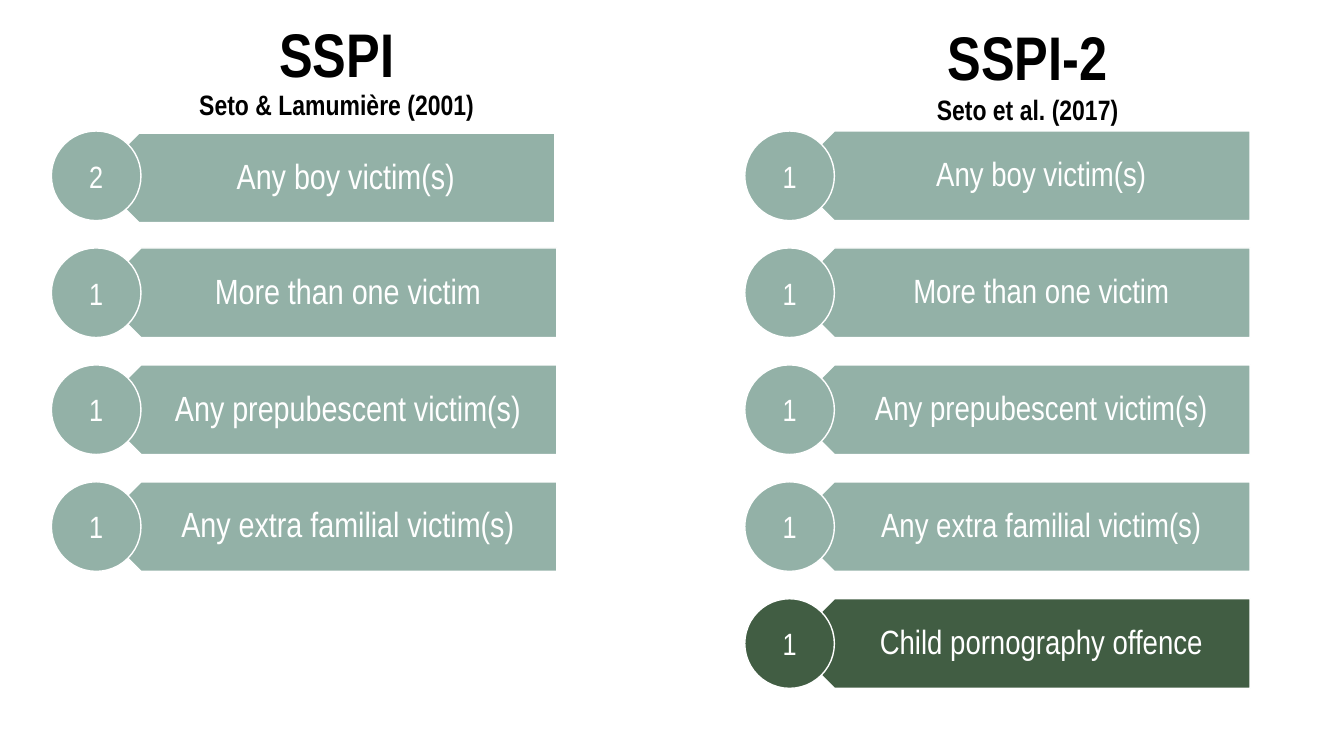
from dataclasses import dataclass

from pptx import Presentation
from pptx.dml.color import RGBColor
from pptx.enum.shapes import MSO_SHAPE as Kind
from pptx.enum.text import MSO_ANCHOR as Anchor, MSO_AUTO_SIZE as Fit, PP_ALIGN as Align
from pptx.shapes.autoshape import Shape
from pptx.slide import Slide
from pptx.util import Pt

FONT = "Arial Narrow"
WHITE, BLACK, SAGE, GREEN = "FFFFFF", "000000", "93B1A7", "415D43"
TOP, PITCH, SIZE = 93.6, 83.52, 64
BAR_W, BAR_DX = 329, 32
LABEL_W, LABEL_DX = 313, 16


@dataclass
class Item:
    label: str
    score: int = 1
    fill: str = SAGE
    shift: float = 0  # bar offset, left and down


@dataclass
class Scale:
    left: float
    size: int
    items: list[Item]


SHARED = ["More than one victim", "Any prepubescent victim(s)", "Any extra familial victim(s)"]
SCALES = [
    Scale(36.72, 25, [Item("Any boy victim(s)", 2, shift=1.44), *map(Item, SHARED)]),
    Scale(532, 24, [Item("Any boy victim(s)"), *map(Item, SHARED),
                    Item("Child pornography offence", fill=GREEN)]),
]


def color(code: str) -> RGBColor:
    return RGBColor.from_string(code)


def write(shape: Shape, *lines: tuple[str, int], ink: str = WHITE, bold: bool = False,
          anchor: Anchor = Anchor.MIDDLE, space: float = 1.0,
          inset: tuple[float, float, float, float] = (7.2, 3.6, 7.2, 3.6)) -> None:
    """Fill a shape with one centred paragraph of (text, size) lines."""
    frame = shape.text_frame
    frame.word_wrap = True
    frame.auto_size = Fit.NONE
    frame.vertical_anchor = anchor
    (frame.margin_left, frame.margin_top,
     frame.margin_right, frame.margin_bottom) = map(Pt, inset)
    para = frame.paragraphs[0]
    para.alignment = Align.CENTER
    para.line_spacing = space
    for i, (text, size) in enumerate(lines):
        if i:
            para.add_line_break()
        run = para.add_run()
        run.text = text
        font = run.font
        font.name, font.size, font.bold = FONT, Pt(size), bold
        font.color.rgb = color(ink)


def draw(slide: Slide, kind: Kind, left: float, top: float, width: float, fill: str) -> Shape:
    shape = slide.shapes.add_shape(kind, Pt(left), Pt(top), Pt(width), Pt(SIZE))
    shape.shadow.inherit = False
    shape.fill.solid()
    shape.fill.fore_color.rgb = color(fill)
    shape.line.color.rgb = color(WHITE)
    shape.line.width = Pt(1)
    return shape


def add_item(slide: Slide, item: Item, left: float, top: float, size: int) -> None:
    bar_x, bar_y = left + BAR_DX - item.shift, top + item.shift
    bar = draw(slide, Kind.PENTAGON, bar_x, bar_y, BAR_W, item.fill)
    bar.rotation = 180
    label = slide.shapes.add_textbox(Pt(bar_x + LABEL_DX), Pt(bar_y), Pt(LABEL_W), Pt(SIZE))
    write(label, (item.label, size), space=0.9, inset=(28, 7.2, 13.6, 7.2))
    disc = draw(slide, Kind.OVAL, left, top, SIZE, item.fill)
    write(disc, (str(item.score), 22))


def main() -> None:
    deck = Presentation()
    deck.slide_width, deck.slide_height = Pt(960), Pt(540)
    slide = deck.slides.add_slide(deck.slide_layouts[5])

    title = slide.shapes.title
    title.left, title.top, title.width, title.height = Pt(96.5), Pt(0), Pt(288), Pt(104.4)
    write(title, ("SSPI", 44), ("Seto & Lamumière (2001)", 20),
          ink=BLACK, bold=True, space=0.9)

    for scale in SCALES:
        for row, item in enumerate(scale.items):
            add_item(slide, item, scale.left, TOP + row * PITCH, scale.size)

    head = slide.shapes.add_textbox(Pt(653), Pt(10), Pt(162), Pt(138))
    write(head, ("SSPI-2", 44), ("Seto et al. (2017)", 20),
          ink=BLACK, bold=True, anchor=Anchor.TOP)

    deck.save("out.pptx")


if __name__ == "__main__":
    main()
